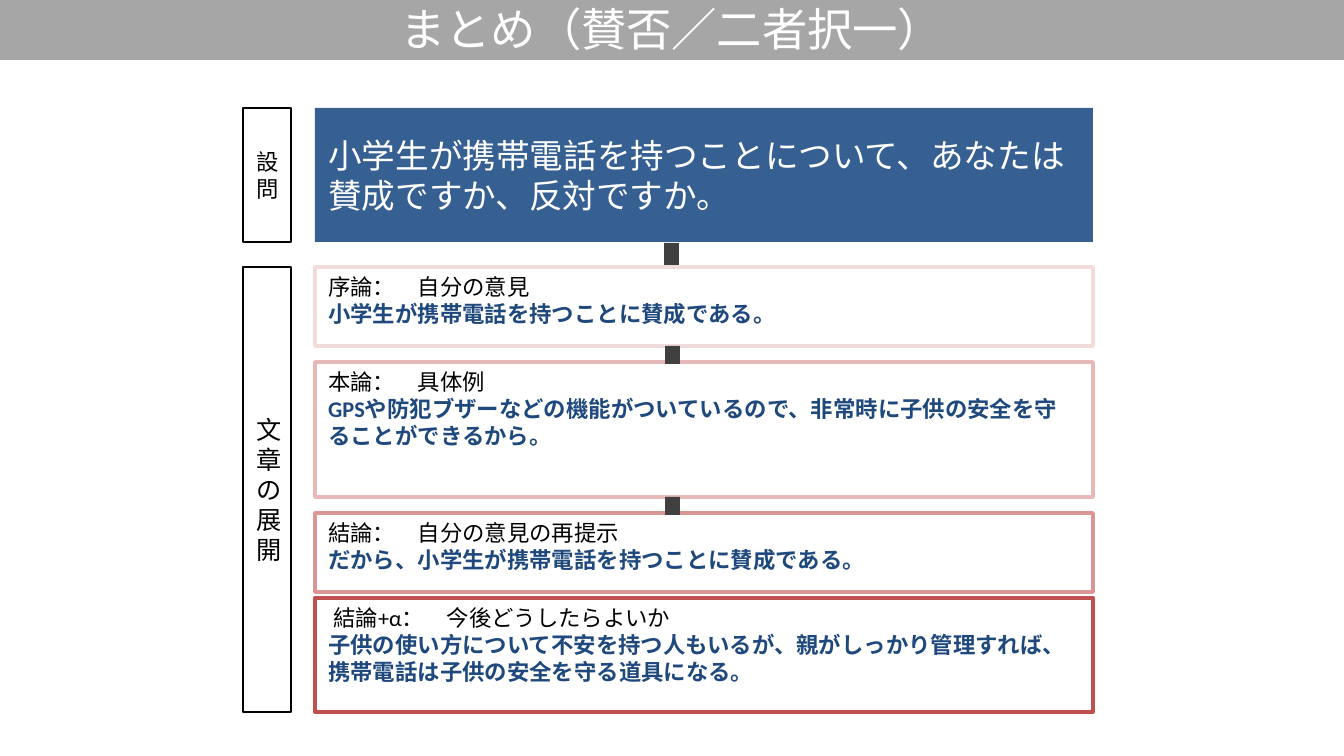
from pptx import Presentation
from pptx.dml.color import RGBColor
from pptx.enum.shapes import MSO_SHAPE as Shape
from pptx.enum.text import MSO_ANCHOR as Anchor, MSO_AUTO_SIZE as AutoSize, PP_ALIGN as Align
from pptx.util import Pt

PX = 914400 / 134.4
FONT = "Calibri"
WHITE = RGBColor(0xFF, 0xFF, 0xFF)
BLACK = RGBColor(0x00, 0x00, 0x00)
GRAY = RGBColor(0xA6, 0xA6, 0xA6)
DARK_GRAY = RGBColor(0x40, 0x40, 0x40)
BLUE = RGBColor(0x37, 0x60, 0x92)
NAVY = RGBColor(0x1F, 0x49, 0x7D)
PINK = RGBColor(0xF2, 0xDC, 0xDB)
ROSE = RGBColor(0xE6, 0xB9, 0xB8)
CORAL = RGBColor(0xD9, 0x96, 0x94)
RED = RGBColor(0xC0, 0x50, 0x4D)

LABEL_LEFT, LABEL_WIDTH = 243, 48
BOX_LEFT, BOX_WIDTH = 315, 778


def add_box(left, top, width, height, fill=None, line=None, line_width=2):
    shape = slide.shapes.add_shape(
        Shape.RECTANGLE, *(round(value * PX) for value in (left, top, width, height)))
    shape.shadow.inherit = False
    if fill is None:
        shape.fill.background()
    else:
        shape.fill.solid()
        shape.fill.fore_color.rgb = fill
    if line is None:
        shape.line.fill.background()
    else:
        shape.line.color.rgb = line
        shape.line.width = Pt(line_width)
    return shape


def write(shape, lines, size, colors, align=Align.LEFT, anchor=Anchor.MIDDLE):
    frame = shape.text_frame
    frame.word_wrap = True
    frame.auto_size = AutoSize.NONE
    frame.vertical_anchor = anchor
    frame.text = "\n".join(lines)
    for paragraph, color in zip(frame.paragraphs, colors):
        paragraph.alignment = align
        paragraph.font.name = FONT
        paragraph.font.size = Pt(size)
        paragraph.font.color.rgb = color
        paragraph.font.bold = color == NAVY


presentation = Presentation()
presentation.slide_width = round(1344 * PX)
presentation.slide_height = round(756 * PX)
slide = presentation.slides.add_slide(presentation.slide_layouts[5])

title = slide.shapes.title
title.left, title.top = 0, round(-3 * PX)
title.width, title.height = presentation.slide_width, round(63 * PX)
title.fill.solid()
title.fill.fore_color.rgb = GRAY
write(title, ["まとめ（賛否／二者択一）"], 24.3, [WHITE], Align.CENTER)

question = add_box(BOX_LEFT, 108, BOX_WIDTH, 134, fill=BLUE)
write(question, ["小学生が携帯電話を持つことについて、あなたは賛成ですか、反対ですか。"], 18, [WHITE])

labels = [("設問", 108, 134, 12), ("文章の展開", 267, 445, 13.5)]
for text, top, height, size in labels:
    label = add_box(LABEL_LEFT, top, LABEL_WIDTH, height, WHITE, BLACK, 1.25)
    write(label, [text], size, [BLACK], Align.CENTER)

sections = [
    (267, 79, PINK, "序論：　自分の意見", "小学生が携帯電話を持つことに賛成である。"),
    (362, 135, ROSE, "本論：　具体例",
     "GPSや防犯ブザーなどの機能がついているので、非常時に子供の安全を守ることができるから。"),
    (513, 79, CORAL, "結論：　自分の意見の再提示",
     "だから、小学生が携帯電話を持つことに賛成である。"),
    (598, 114, RED, " 結論+α：　今後どうしたらよいか",
     "子供の使い方について不安を持つ人もいるが、親がしっかり管理すれば、携帯電話は子供の安全を守る道具になる。"),
]
for top, height, color, heading, body in sections:
    section = add_box(BOX_LEFT, top, BOX_WIDTH, height, line=color)
    write(section, [heading, body], 12, [BLACK, NAVY], anchor=Anchor.TOP)

for left, top, height in [(664, 243, 22), (665, 346, 18), (665, 497, 18)]:
    add_box(left, top, 15, height, fill=DARK_GRAY)

presentation.save("out.pptx")
